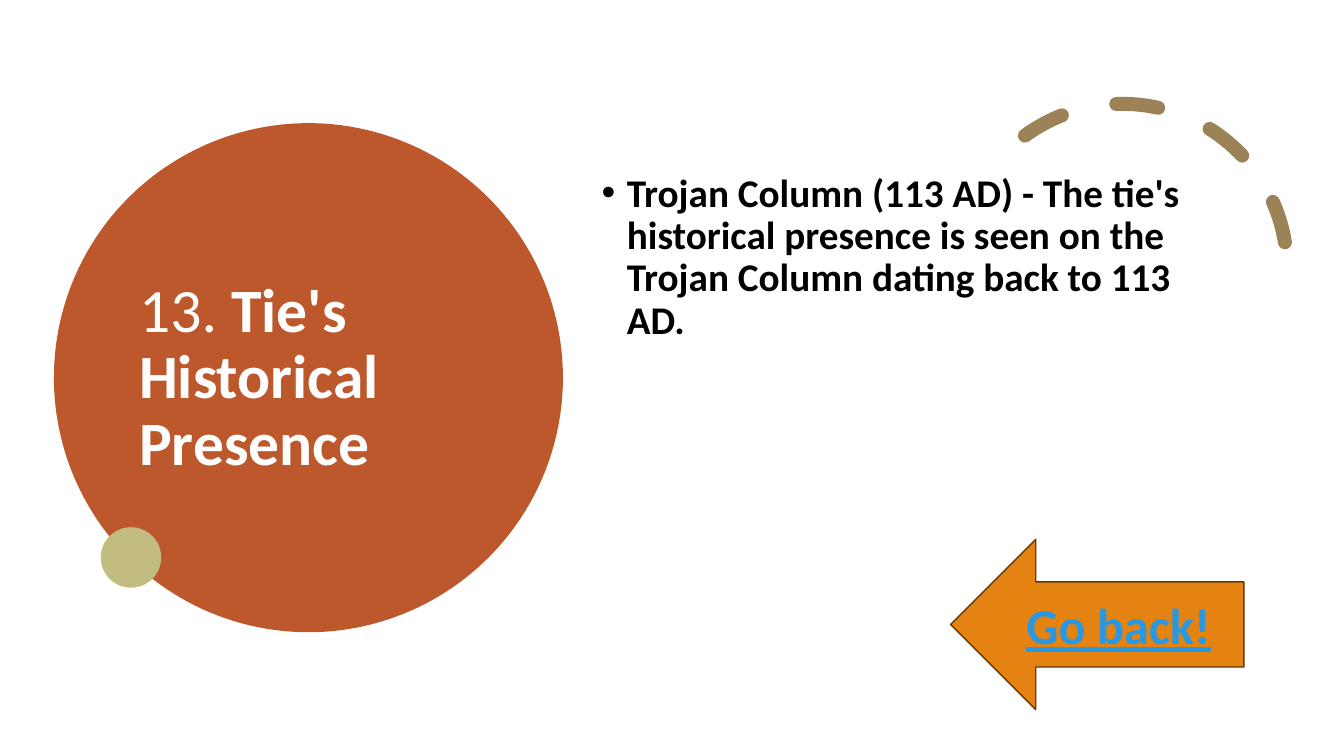
from dataclasses import dataclass

from lxml import etree
from pptx import Presentation
from pptx.dml.color import RGBColor
from pptx.enum.dml import MSO_LINE_DASH_STYLE as Dash
from pptx.enum.shapes import MSO_SHAPE as Preset
from pptx.enum.text import MSO_ANCHOR as Anchor, MSO_AUTO_SIZE as AutoSize, PP_ALIGN as Align
from pptx.oxml.ns import qn
from pptx.util import Pt


@dataclass(frozen=True)
class Theme:
    font: str = "Calibri"
    rust: str = "BD582C"
    khaki: str = "C2BC80"
    bronze: str = "9B8357"
    orange: str = "E48312"
    brown: str = "643908"
    sky: str = "2998E3"
    white: str = "FFFFFF"
    black: str = "000000"
    title_size: int = 44
    button_size: int = 36
    body_size: int = 28


class SlideBuilder:
    def __init__(self, slide, theme):
        self.slide = slide
        self.theme = theme

    def add_preset(self, preset, box, fill=None, line=None, line_width=1):
        shape = self.slide.shapes.add_shape(preset, *map(Pt, box))
        shape.shadow.inherit = False
        if fill:
            shape.fill.solid()
            shape.fill.fore_color.rgb = RGBColor.from_string(fill)
        else:
            shape.fill.background()
        if line:
            shape.line.color.rgb = RGBColor.from_string(line)
            shape.line.width = Pt(line_width)
        else:
            shape.line.fill.background()
        return shape

    def add_dashed_arc(self, box, rotation, angles, color, width):
        arc = self.add_preset(Preset.ARC, box, line=color, line_width=width)
        arc.rotation = rotation
        for index, angle in enumerate(angles):
            # Angles are stored in 1/60000 degree, adjustments in 1/100000.
            arc.adjustments[index] = angle * 0.6
        arc.line.dash_style = Dash.DASH
        line_element = arc._element.spPr.find(qn("a:ln"))
        line_element.set("cap", "rnd")

    def place(self, placeholder, box):
        """Position a placeholder in front of everything added so far."""
        placeholder.left, placeholder.top, placeholder.width, placeholder.height = map(Pt, box)
        self.slide.shapes._spTree.append(placeholder._element)

    def add_text(self, shape, runs, size, color, anchor, align=Align.LEFT, underline=False):
        """Fill a shape with one paragraph made of (text, bold) runs."""
        frame = shape.text_frame
        frame.word_wrap = True
        frame.auto_size = AutoSize.NONE
        frame.vertical_anchor = anchor
        paragraph = frame.paragraphs[0]
        paragraph.alignment = align
        for text, bold in runs:
            run = paragraph.add_run()
            run.text = text
            font = run.font
            font.name = self.theme.font
            font.size = Pt(size)
            font.bold = bold
            font.underline = underline
            font.color.rgb = RGBColor.from_string(color)
        return paragraph

    def add_title(self, box, runs):
        title = self.slide.shapes.title
        self.place(title, box)
        paragraph = self.add_text(title, runs, self.theme.title_size, self.theme.white, Anchor.MIDDLE)
        paragraph.line_spacing = 0.9

    def add_bullet(self, box, runs):
        body = self.slide.placeholders[1]
        self.place(body, box)
        paragraph = self.add_text(body, runs, self.theme.body_size, self.theme.black, Anchor.TOP)
        paragraph.line_spacing = 0.9
        paragraph.space_before = Pt(10)
        properties = paragraph._p.get_or_add_pPr()
        properties.set("marL", str(Pt(18)))
        properties.set("indent", str(-Pt(18)))
        etree.SubElement(properties, qn("a:buFont")).set("typeface", "Arial")
        etree.SubElement(properties, qn("a:buChar")).set("char", "•")

    def add_button(self, box, label):
        theme = self.theme
        arrow = self.add_preset(Preset.LEFT_ARROW, box, theme.orange, theme.brown)
        self.add_text(arrow, [(label, True)], theme.button_size, theme.sky,
                      Anchor.MIDDLE, Align.CENTER, underline=True)


def main():
    presentation = Presentation()
    presentation.slide_width, presentation.slide_height = Pt(960), Pt(540)
    theme = Theme()
    slide = presentation.slides.add_slide(presentation.slide_layouts[1])
    builder = SlideBuilder(slide, theme)

    builder.add_preset(Preset.OVAL, (38.5, 88, 363.6, 363.6), theme.rust)
    builder.add_title((92.2, 110.2, 254.9, 320.4),
                      [("13. ", False), ("Tie's Historical Presence", True)])
    builder.add_dashed_arc((684, 74.2, 235.4, 235.4), 330.2, (263.62, 29.69), theme.bronze, 10)
    builder.add_preset(Preset.OVAL, (72, 376.6, 43.2, 43.2), theme.khaki)
    builder.add_bullet((422.6, 120.2, 435.6, 309.6),
                       [("Trojan Column (113 AD) - The tie's historical presence is seen "
                         "on the Trojan Column dating back to 113 AD.", True)])
    builder.add_button((679, 385.2, 209.5, 121.7), "Go back!")

    presentation.save("out.pptx")


if __name__ == "__main__":
    main()
